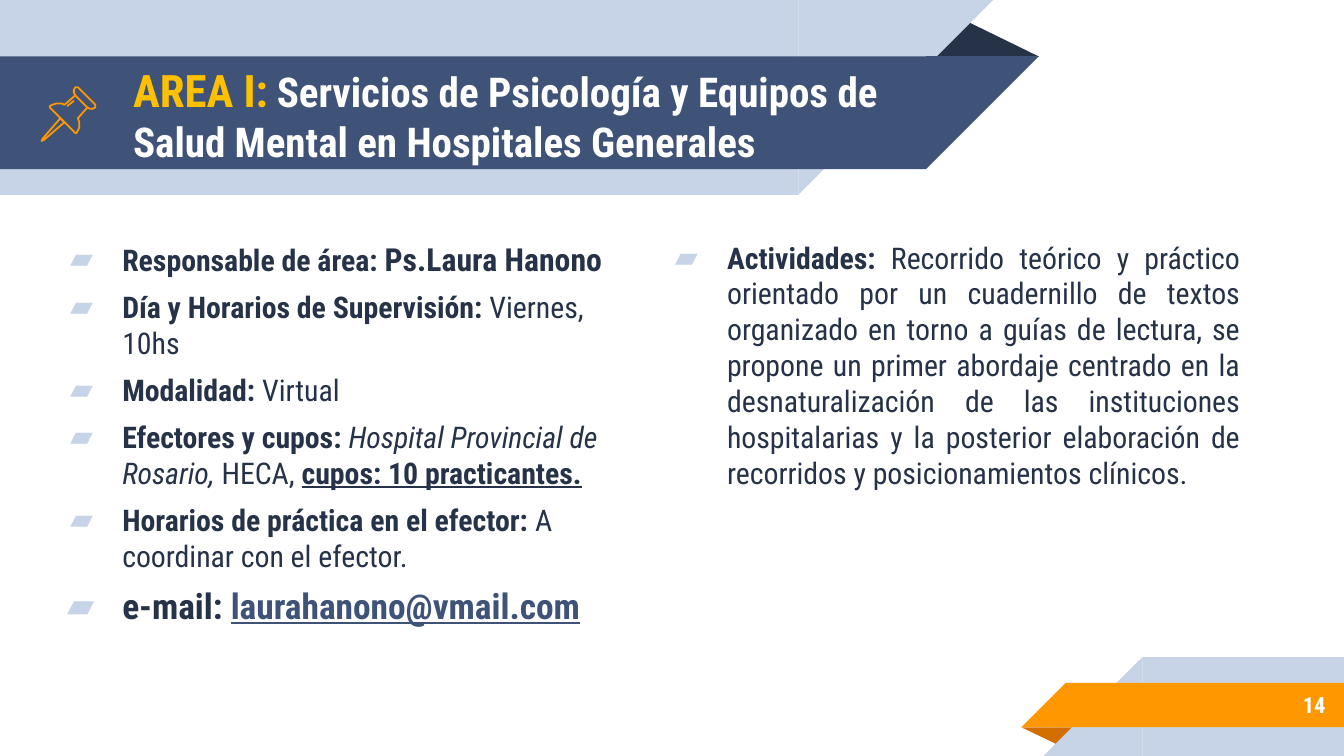
from dataclasses import dataclass

from lxml.etree import SubElement
from pptx import Presentation
from pptx.dml.color import RGBColor
from pptx.enum.shapes import MSO_SHAPE
from pptx.enum.text import MSO_ANCHOR, MSO_AUTO_SIZE, PP_ALIGN
from pptx.oxml.ns import qn
from pptx.util import Pt

FONT = "Roboto Condensed"
NAVY = RGBColor(0x26, 0x32, 0x48)
BLUE = RGBColor(0x3F, 0x53, 0x78)
PALE = RGBColor(0xC7, 0xD3, 0xE6)
ORANGE = RGBColor(0xFF, 0x98, 0x00)
RUST = RGBColor(0xD2, 0x6F, 0x00)
GOLD = RGBColor(0xFF, 0xC0, 0x00)
WHITE = RGBColor(0xFF, 0xFF, 0xFF)
SLIDE_W, SLIDE_H = 720, 405
INSET = 7.2


@dataclass
class Box:
    x: float
    y: float
    w: float
    h: float


@dataclass
class Band:
    box: Box
    color: RGBColor
    at_top: bool


@dataclass
class Fold:
    box: Box
    color: RGBColor
    rotation: int


@dataclass
class Run:
    text: str
    size: float = 16
    color: RGBColor = NAVY
    bold: bool = False
    italic: bool = False
    underline: bool = False


@dataclass
class Item:
    runs: list[Run]
    indent: float = 28
    align: PP_ALIGN = PP_ALIGN.LEFT


@dataclass
class Outline:
    points: list[tuple[int, int]]
    closed: bool = True


FOLDS = [Fold(Box(495.4, 10.1, 61.2, 20.2), NAVY, 0),
         Fold(Box(547.2, 389.6, 31, 10.1), RUST, 180)]
BANDS = [
    Band(Box(0, 0, 427.7, 104.4), PALE, True),
    Band(Box(0, 30.2, 496.1, 60.5), BLUE, True),
    Band(Box(612, 352.1, 108, 52.9), PALE, False),
    Band(Box(571, 365.8, 149, 23.8), ORANGE, False),
]

TITLE = [
    Run("AREA I:", 24, GOLD, bold=True),
    Run(" ", 20, WHITE, bold=True),
    Run("Servicios de Psicología y Equipos de Salud Mental en Hospitales Generales",
        22, WHITE, bold=True),
]
DETAILS = [
    Item([Run("Responsable de área: ", bold=True),
          Run("Ps.Laura Hanono", 17, bold=True)]),
    Item([Run("Día y Horarios de Supervisión:", bold=True), Run(" Viernes, 10hs")]),
    Item([Run("Modalidad: ", bold=True), Run("Virtual")]),
    Item([Run("Efectores y cupos: ", bold=True),
          Run("Hospital Provincial de Rosario,", italic=True),
          Run(" HECA, "),
          Run("cupos: 10 practicantes.", bold=True, underline=True)]),
    Item([Run("Horarios de práctica en el efector:", bold=True),
          Run(" A coordinar con el efector.")]),
    Item([Run("e-mail: ", 19, bold=True),
          Run("laurahanono@vmail.com", 19, BLUE, bold=True, underline=True)], indent=29.5),
]
ACTIVITIES = [
    Item([Run("Actividades:", bold=True),
          Run(" Recorrido teórico y práctico orientado por un cuadernillo de textos "
              "organizado en torno a guías de lectura, se propone un primer abordaje "
              "centrado en la desnaturalización de las instituciones hospitalarias y la "
              "posterior elaboración de recorridos y posicionamientos clínicos.")],
         align=PP_ALIGN.JUSTIFY),
]

PIN_UNIT = 0.72
PIN = [
    Outline([(45, 88), (32, 103), (31, 105), (33, 104), (48, 91)]),
    Outline([(56, 71), (65, 80), (67, 81), (69, 81), (71, 80), (71, 78),
             (58, 65), (56, 65), (55, 67), (55, 69)]),
    Outline([(56, 71), (48, 78), (46, 77), (42, 77), (39, 78), (37, 79), (37, 80),
             (38, 81), (55, 98), (56, 99), (57, 99), (58, 97), (59, 95), (59, 91),
             (58, 88), (65, 80)], closed=False),
    Outline([(50, 79), (55, 75)], closed=False),
]


def place(sp, box: Box) -> None:
    sp.left, sp.top, sp.width, sp.height = Pt(box.x), Pt(box.y), Pt(box.w), Pt(box.h)


def add_block(s, kind: MSO_SHAPE, box: Box, color: RGBColor):
    sp = s.shapes.add_shape(kind, Pt(box.x), Pt(box.y), Pt(box.w), Pt(box.h))
    sp.shadow.inherit = False
    sp.fill.solid()
    sp.fill.fore_color.rgb = color
    sp.line.fill.background()
    return sp


def add_fold(s, fold: Fold) -> None:
    sp = add_block(s, MSO_SHAPE.ISOSCELES_TRIANGLE, fold.box, fold.color)
    sp.adjustments[0] = 0.324
    sp.rotation = fold.rotation


def add_band(s, band: Band) -> None:
    box = band.box
    add_block(s, MSO_SHAPE.RECTANGLE, box, band.color)
    x = box.x + box.w if band.at_top else box.x - box.h
    sp = add_block(s, MSO_SHAPE.RIGHT_TRIANGLE, Box(x, box.y, box.h, box.h), band.color)
    flip = "flipV" if band.at_top else "flipH"
    sp._element.spPr.find(qn("a:xfrm")).set(flip, "1")


def add_outline(s, outline: Outline) -> None:
    start, *rest = outline.points
    builder = s.shapes.build_freeform(*start, scale=Pt(PIN_UNIT))
    builder.add_line_segments(rest, close=outline.closed)
    sp = builder.convert_to_shape()
    sp.shadow.inherit = False
    sp.fill.background()
    sp.line.color.rgb = ORANGE
    sp.line.width = Pt(0.96)


def setup_frame(sp, anchor: MSO_ANCHOR):
    tf = sp.text_frame
    tf.word_wrap = True
    tf.auto_size = MSO_AUTO_SIZE.NONE
    tf.vertical_anchor = anchor
    tf.margin_left = tf.margin_right = tf.margin_top = tf.margin_bottom = Pt(INSET)
    return tf


def add_runs(p, runs: list[Run]) -> None:
    for run in runs:
        r = p.add_run()
        r.text = run.text
        r.font.name = FONT
        r.font.size = Pt(run.size)
        r.font.color.rgb = run.color
        r.font.bold = run.bold
        r.font.italic = run.italic
        r.font.underline = run.underline


def set_bullet(p, indent: float) -> None:
    pPr = p._p.get_or_add_pPr()
    pPr.set("marL", str(Pt(36)))
    pPr.set("indent", str(-Pt(indent)))
    color = SubElement(pPr, qn("a:buClr"))
    SubElement(color, qn("a:srgbClr")).set("val", str(PALE))
    SubElement(pPr, qn("a:buFont")).set("typeface", FONT)
    SubElement(pPr, qn("a:buChar")).set("char", "▰")


def fill_line(sp, box: Box, runs: list[Run], align: PP_ALIGN) -> None:
    place(sp, box)
    p = setup_frame(sp, MSO_ANCHOR.MIDDLE).paragraphs[0]
    p.alignment = align
    add_runs(p, runs)


def fill_list(sp, box: Box, items: list[Item]) -> None:
    place(sp, box)
    tf = setup_frame(sp, MSO_ANCHOR.TOP)
    for i, item in enumerate(items):
        p = tf.add_paragraph() if i else tf.paragraphs[0]
        p.alignment = item.align
        p.space_before = Pt(6)
        set_bullet(p, item.indent)
        add_runs(p, item.runs)


def main() -> None:
    prs = Presentation()
    prs.slide_width, prs.slide_height = Pt(SLIDE_W), Pt(SLIDE_H)
    s = prs.slides.add_slide(prs.slide_layouts[3])
    for fold in FOLDS:
        add_fold(s, fold)
    for band in BANDS:
        add_band(s, band)
    fill_line(s.shapes.title, Box(64.1, 31, 432.7, 60.5), TITLE, PP_ALIGN.LEFT)
    fill_list(s.placeholders[1], Box(22.3, 121, 313.2, 254.9), DETAILS)
    fill_list(s.placeholders[2], Box(346.3, 121, 325.4, 214.6), ACTIVITIES)
    for sp in list(s.placeholders):
        s.shapes._spTree.append(sp._element)
    number = s.shapes.add_textbox(0, 0, 0, 0)
    fill_line(number, Box(599.8, 365, 117.4, 25.2),
              [Run("14", 12, WHITE, bold=True)], PP_ALIGN.RIGHT)
    for outline in PIN:
        add_outline(s, outline)
    prs.save("out.pptx")


if __name__ == "__main__":
    main()
